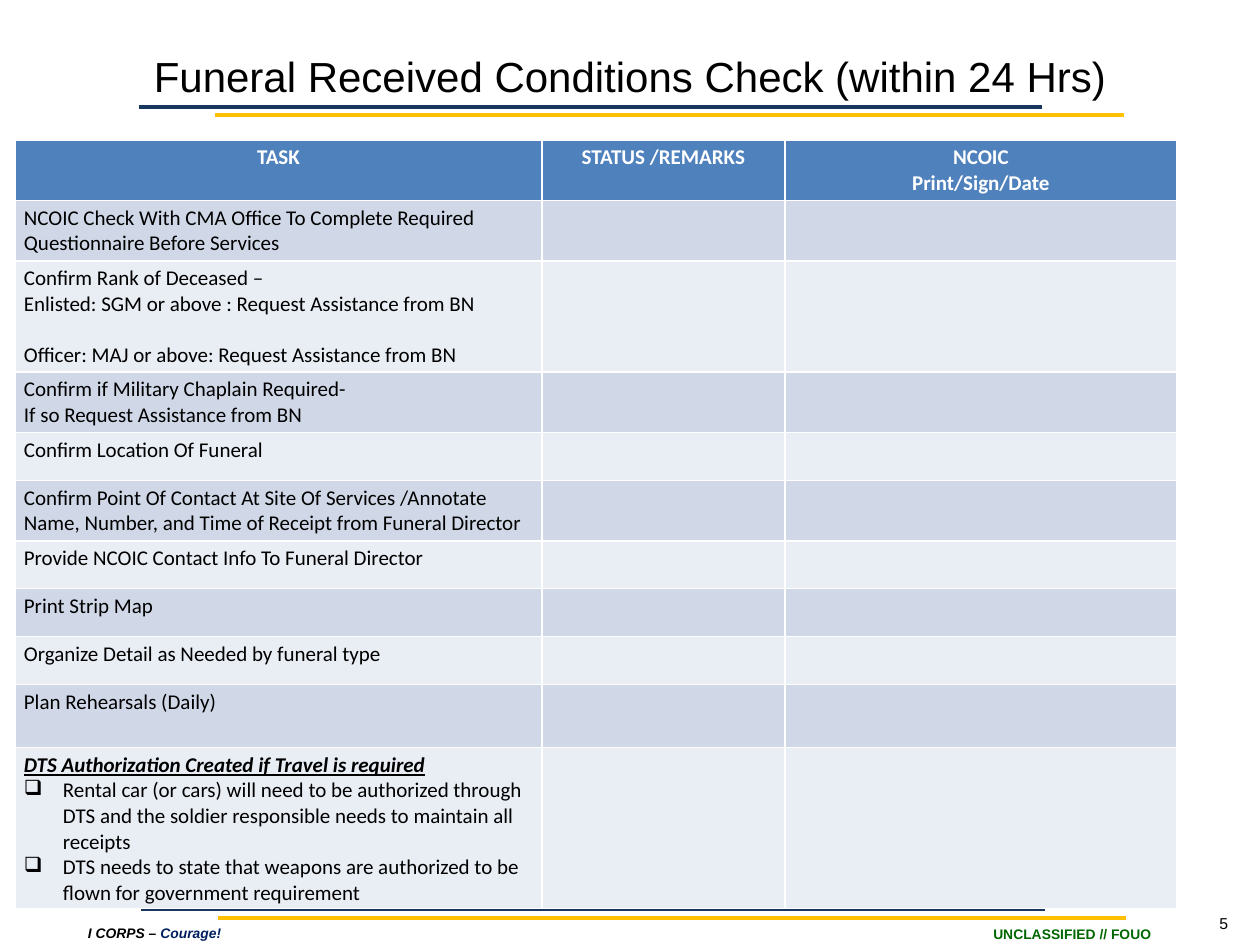
import dataclasses

import lxml.etree
import pptx
import pptx.dml.color
import pptx.enum.shapes
import pptx.enum.text
import pptx.oxml.ns
import pptx.util

WIDTH, HEIGHT = 10, 7.5
CENTER = pptx.enum.text.PP_ALIGN.CENTER


@dataclasses.dataclass(frozen=True)
class Theme:
    navy: str = "17375E"
    gold: str = "FFC000"
    green: str = "006600"
    motto: str = "002060"
    ink: str = "000000"
    paper: str = "FFFFFF"
    header: str = "4F81BD"
    bands: tuple = ("D0D8E8", "E9EDF4")
    heading_font: str = "Arial"
    table_font: str = "Calibri"
    title: float = 24
    body: float = 12
    page: float = 9
    footer: float = 7.9
    rule: float = 2.25


THEME = Theme()
COLUMNS = (4.18, 1.93, 3.11)
HEADINGS = (["TASK"], ["STATUS /REMARKS"], ["NCOIC", "Print/Sign/Date"])
TASKS = [
    (0.48, ["NCOIC Check With CMA Office To Complete Required Questionnaire Before Services"]),
    (0.88, ["Confirm Rank of Deceased –",
            "Enlisted: SGM or above : Request Assistance from BN",
            "Officer: MAJ or above: Request Assistance from BN"]),
    (0.48, ["Confirm if Military Chaplain Required-",
            "If so Request Assistance from BN"]),
    (0.38, ["Confirm Location Of Funeral"]),
    (0.48, ["Confirm Point Of Contact At Site Of Services /Annotate Name, Number, "
            "and Time of Receipt from Funeral Director"]),
    (0.38, ["Provide NCOIC Contact Info To Funeral Director"]),
    (0.38, ["Print Strip Map"]),
    (0.38, ["Organize Detail as Needed by funeral type"]),
    (0.5, ["Plan Rehearsals (Daily)"]),
]
TRAVEL_HEIGHT = 1.28
TRAVEL_HEADING = "DTS Authorization Created if Travel is required"
TRAVEL_CHECKS = [
    "Rental car (or cars) will need to be authorized through DTS and the soldier "
    "responsible needs to maintain all receipts",
    "DTS needs to state that weapons are authorized to be flown for government requirement",
]


def rgb(value):
    return pptx.dml.color.RGBColor.from_string(value)


def across(share):
    return pptx.util.Inches(WIDTH * share)


def down(share):
    return pptx.util.Inches(HEIGHT * share)


def add_run(p, text, size, font, color, bold=False, italic=False, underline=False):
    r = p.add_run()
    r.text = text
    r.font.size = pptx.util.Pt(size)
    r.font.name = font
    r.font.color.rgb = rgb(color)
    r.font.bold = bold
    r.font.italic = italic
    r.font.underline = underline


def add_rule(slide, left, right, y, color):
    line = slide.shapes.add_connector(
        pptx.enum.shapes.MSO_CONNECTOR.STRAIGHT,
        across(left), down(y), across(right), down(y))
    line.line.color.rgb = rgb(color)
    line.line.width = pptx.util.Pt(THEME.rule)
    lxml.etree.SubElement(line._element.spPr, pptx.oxml.ns.qn("a:effectLst"))


def add_rule_pair(slide, left, y):
    add_rule(slide, left, left + 0.717, y, THEME.navy)
    add_rule(slide, left + 0.061, left + 0.782, y + 0.009, THEME.gold)


def add_label(slide, left, top, width, height, size, runs, align=None):
    sp = slide.shapes.add_textbox(across(left), down(top), across(width), down(height))
    tf = sp.text_frame
    tf.word_wrap = True
    p = tf.paragraphs[0]
    p.alignment = align
    for text, color, bold, italic in runs:
        add_run(p, text, size, THEME.heading_font, color, bold, italic)
    return tf


def next_paragraph(tf):
    first = tf.paragraphs[0]
    return tf.add_paragraph() if first.runs else first


def add_cell_line(cell, text, color=THEME.ink, align=None, **style):
    p = next_paragraph(cell.text_frame)
    p.alignment = align
    add_run(p, text, THEME.body, THEME.table_font, color, **style)
    return p


def add_check_line(cell, text):
    p = add_cell_line(cell, text)
    pPr = p._p.get_or_add_pPr()
    indent = pptx.util.Inches(0.31)
    pPr.set("marL", str(indent))
    pPr.set("indent", str(-indent))
    bullet = lxml.etree.SubElement(pPr, pptx.oxml.ns.qn("a:buChar"))
    bullet.set("char", "❑")


def style_cell(cell, fill):
    cell.fill.solid()
    cell.fill.fore_color.rgb = rgb(fill)
    cell.margin_left = cell.margin_right = pptx.util.Inches(0.07)
    cell.margin_top = cell.margin_bottom = pptx.util.Inches(0.04)


def add_checklist(slide):
    heights = [0.47] + [height for height, lines in TASKS] + [TRAVEL_HEIGHT]
    table = slide.shapes.add_table(
        len(heights), len(COLUMNS), across(0.012), down(0.148),
        pptx.util.Inches(sum(COLUMNS)), pptx.util.Inches(sum(heights))).table
    for column, width in zip(table.columns, COLUMNS):
        column.width = pptx.util.Inches(width)
    for i, (row, height) in enumerate(zip(table.rows, heights)):
        row.height = pptx.util.Inches(height)
        for cell in row.cells:
            style_cell(cell, THEME.bands[(i - 1) % 2] if i else THEME.header)
    for i, lines in enumerate(HEADINGS):
        for text in lines:
            add_cell_line(table.cell(0, i), text, THEME.paper, CENTER, bold=True)
    for i, (height, lines) in enumerate(TASKS, start=1):
        for text in lines:
            p = add_cell_line(table.cell(i, 0), text)
            if text.startswith("Officer"):
                p.space_before = pptx.util.Pt(14.6)
    travel = table.cell(len(heights) - 1, 0)
    add_cell_line(travel, TRAVEL_HEADING, bold=True, italic=True, underline=True)
    for text in TRAVEL_CHECKS:
        add_check_line(travel, text)


def add_footer(slide):
    marking = add_label(slide, 0.751, 0.98, 0.2, 0.017, THEME.footer,
                        [("UNCLASSIFIED // FOUO", THEME.green, True, False)], CENTER)
    marking.margin_top = marking.margin_bottom = 0
    marking.vertical_anchor = pptx.enum.text.MSO_ANCHOR.MIDDLE
    add_label(slide, 0.06, 0.972, 0.187, 0.032, THEME.footer,
              [("I CORPS – ", THEME.ink, True, True),
               ("Courage!", THEME.motto, True, True)])
    add_label(slide, 0.958, 0.96, 0.042, 0.033, THEME.page,
              [("5", THEME.ink, False, False)])


def main():
    prs = pptx.Presentation()
    prs.slide_width, prs.slide_height = across(1), down(1)
    slide = prs.slides.add_slide(prs.slide_layouts[6])
    add_rule_pair(slide, 0.112, 0.962)
    add_rule_pair(slide, 0.11, 0.113)
    add_footer(slide)
    add_label(slide, 0, 0.047, 1, 0.067, THEME.title,
              [("Funeral Received Conditions Check (within 24 Hrs)", THEME.ink, False, False)],
              CENTER)
    add_checklist(slide)
    prs.save("out.pptx")


if __name__ == "__main__":
    main()
